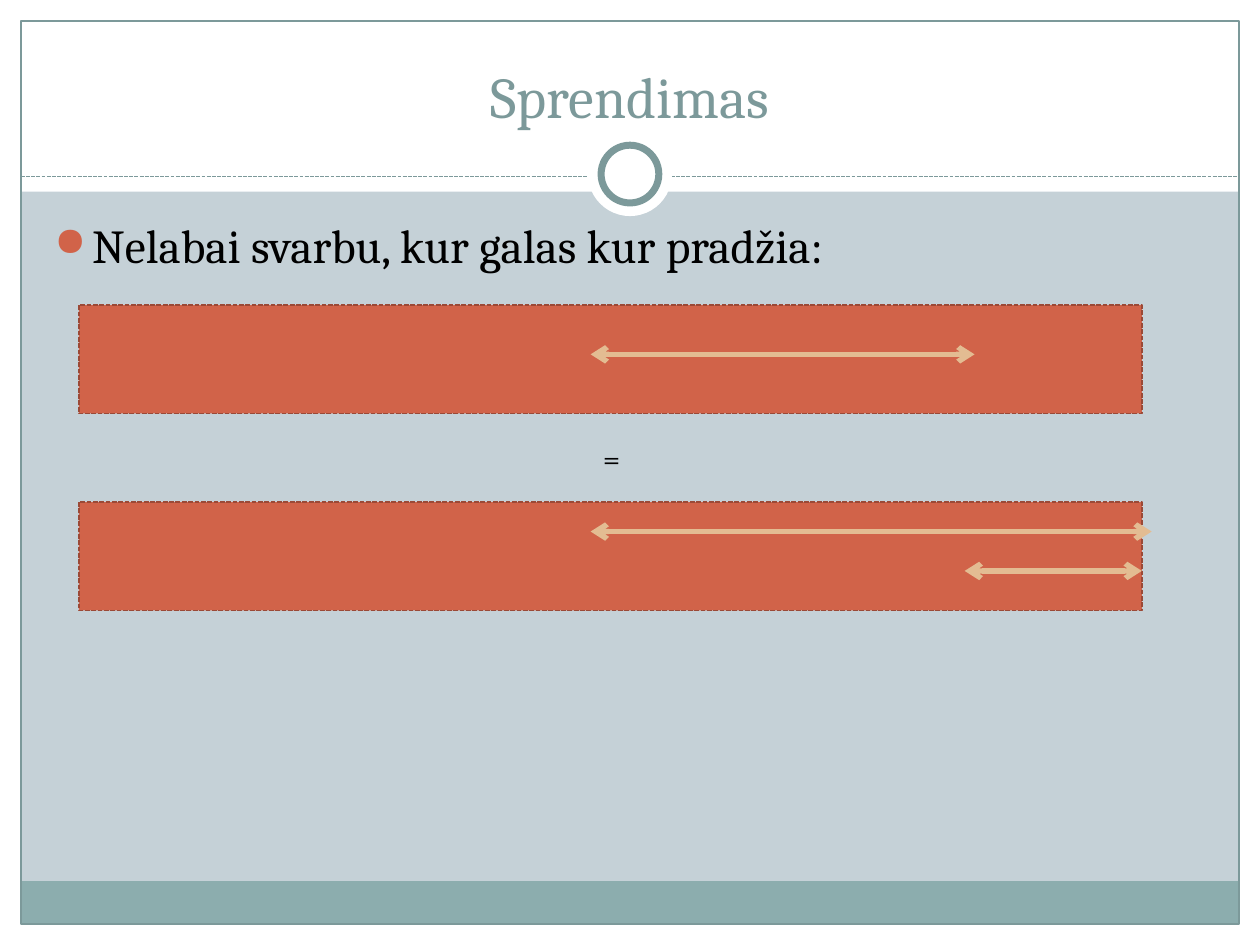
from dataclasses import dataclass

from lxml.etree import SubElement
from pptx import Presentation
from pptx.dml.color import RGBColor
from pptx.enum.dml import MSO_LINE
from pptx.enum.shapes import MSO_CONNECTOR, MSO_SHAPE
from pptx.enum.text import MSO_ANCHOR, MSO_AUTO_SIZE, PP_ALIGN
from pptx.oxml.ns import qn
from pptx.util import Pt


@dataclass(frozen=True)
class Theme:
    font: str = "Cambria"
    background: str = "C5D1D7"
    paper: str = "FFFFFF"
    frame: str = "7C999A"
    footer: str = "8CADAE"
    accent: str = "D16349"
    bar_edge: str = "9B4936"
    arrow: str = "E3BC92"
    ink: str = "000000"
    title_size: float = 33
    body_size: float = 27
    label_size: float = 18


class SlideBuilder:
    """Draws styled elements on one slide, with lengths in points."""

    def __init__(self, slide, theme):
        self.slide = slide
        self.theme = theme
        fill = slide.background.fill
        fill.solid()
        fill.fore_color.rgb = RGBColor.from_string(theme.background)

    def apply(self, target, **values):
        for name, value in values.items():
            setattr(target, name, value)

    def stroke(self, line, color, width, dash=None):
        line.color.rgb = RGBColor.from_string(color)
        self.apply(line, width=Pt(width), dash_style=dash)

    def shape(self, box, fill=None, line=None, kind=MSO_SHAPE.RECTANGLE):
        shape = self.slide.shapes.add_shape(kind, *map(Pt, box))
        shape.shadow.inherit = False
        if fill:
            shape.fill.solid()
            shape.fill.fore_color.rgb = RGBColor.from_string(fill)
        else:
            shape.fill.background()
        if line:
            self.stroke(shape.line, *line)
        else:
            shape.line.fill.background()
        return shape

    def line(self, left, right, y, style, arrows=False):
        connector = self.slide.shapes.add_connector(
            MSO_CONNECTOR.STRAIGHT, Pt(left), Pt(y), Pt(right), Pt(y))
        self.stroke(connector.line, *style)
        SubElement(connector._element.spPr, qn("a:effectLst"))
        if arrows:
            outline = connector.line._get_or_add_ln()
            for end in ("a:headEnd", "a:tailEnd"):
                SubElement(outline, qn(end), type="arrow")

    def text(self, box, content, size, color, frame=None, align=PP_ALIGN.LEFT):
        text_frame = self.slide.shapes.add_textbox(*map(Pt, box)).text_frame
        self.apply(text_frame, **{"word_wrap": True, **(frame or {})})
        paragraph = text_frame.paragraphs[0]
        paragraph.alignment = align
        run = paragraph.add_run()
        run.text = content
        self.apply(run.font, name=self.theme.font, size=Pt(size))
        run.font.color.rgb = RGBColor.from_string(color)
        return paragraph

    def bullet(self, paragraph, indent):
        properties = paragraph._p.get_or_add_pPr()
        properties.set("marL", str(Pt(indent)))
        properties.set("indent", str(-Pt(indent)))
        color = SubElement(properties, qn("a:buClr"))
        SubElement(color, qn("a:srgbClr"), val=self.theme.accent)
        SubElement(properties, qn("a:buSzPct"), val="85000")
        SubElement(properties, qn("a:buChar"), char="●")


def draw_frame(builder, width, height):
    theme = builder.theme
    margin = 12
    inner = width - 2 * margin
    for box in ((0, height - margin, width, margin), (0, 0, width, 109.5),
                (0, 0, margin, height), (width - margin, 0, margin, height)):
        builder.shape(box, theme.paper)
    builder.shape((margin, 503.5, inner, 24.5), theme.footer)
    builder.shape((margin, margin, inner, height - 2 * margin),
                  line=(theme.frame, 0.75))
    builder.line(margin, width - margin, 100.8,
                 (theme.frame, 0.75, MSO_LINE.SQUARE_DOT))
    for diameter, outline in ((48, None), (33, (theme.frame, 4))):
        radius = diameter / 2
        builder.shape((width / 2 - radius, 99.5 - radius, diameter, diameter),
                      theme.paper, outline, MSO_SHAPE.OVAL)


def draw_content(builder):
    theme = builder.theme
    builder.text((24, 18, 672, 60), "Sprendimas", theme.title_size, theme.frame,
                 {"vertical_anchor": MSO_ANCHOR.BOTTOM}, PP_ALIGN.CENTER)
    statement = builder.text((24, 120, 669.6, 360),
                             "Nelabai svarbu, kur galas kur pradžia:",
                             theme.body_size, theme.ink)
    builder.bullet(statement, 21.6)

    bar_left, bar_width, bar_height = 45, 607.5, 61.9
    bar_right = bar_left + bar_width
    start = 337.5
    bars = ((174.4, ((start, 556.9, 202.5),)),
            (286.9, ((start, 658.1, 303.75), (551.25, bar_right, 326.25))))
    for top, arrows in bars:
        builder.shape((bar_left, top, bar_width, bar_height), theme.accent,
                      (theme.bar_edge, 0.9, MSO_LINE.SQUARE_DOT))
        for left, right, y in arrows:
            builder.line(left, right, y, (theme.arrow, 3), arrows=True)
    builder.text((start, 247.5, 25.9, 29), "=", theme.label_size, theme.ink,
                 {"word_wrap": False,
                  "auto_size": MSO_AUTO_SIZE.SHAPE_TO_FIT_TEXT})


def main():
    width, height = 720, 540
    presentation = Presentation()
    presentation.slide_width = Pt(width)
    presentation.slide_height = Pt(height)
    slide = presentation.slides.add_slide(presentation.slide_layouts[6])
    builder = SlideBuilder(slide, Theme())
    draw_frame(builder, width, height)
    draw_content(builder)
    presentation.save("out.pptx")


if __name__ == "__main__":
    main()
